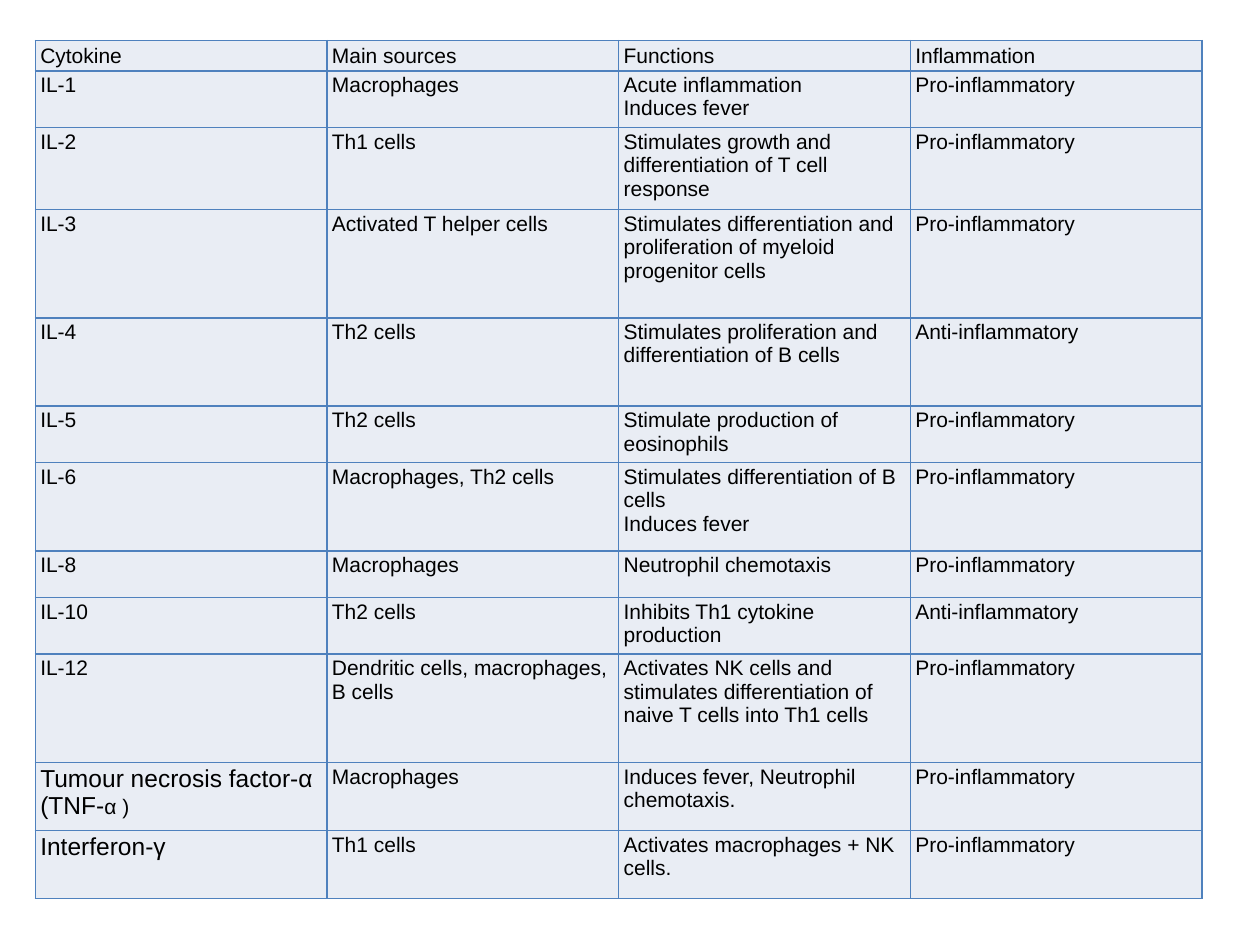
from dataclasses import dataclass

from pptx import Presentation
from pptx import util as u
from pptx.dml.color import RGBColor
from pptx.enum import text
from pptx.oxml import parse_xml
from pptx.oxml.ns import nsdecls


@dataclass(frozen=True)
class Theme:
    font: str = "Arial"
    ink: str = "000000"
    fill: str = "E9EDF4"
    border: str = "4F81BD"
    border_width: float = 1
    body: float = 12
    large: float = 14


@dataclass(frozen=True)
class Span:
    words: str
    size: float


@dataclass(frozen=True)
class Cytokine:
    name: str | tuple[Span, ...]
    sources: str
    functions: str
    inflammation: str
    height: float


THEME = Theme()
WIDTH, HEIGHT = u.Inches(10), u.Inches(7.5)
LEFT, TOP, TABLE_WIDTH = 0.028, 0.043, 0.926
PRO, ANTI = "Pro-inflammatory", "Anti-inflammatory"
MACROPHAGES, TH1, TH2 = "Macrophages", "Th1 cells", "Th2 cells"
CELL_FORMAT = {
    "margin_left": u.Inches(0.04),
    "margin_right": u.Inches(0.04),
    "margin_top": u.Inches(0.02),
    "margin_bottom": u.Inches(0.02),
}

ROWS = [
    Cytokine("Cytokine", "Main sources", "Functions", "Inflammation", 0.24),
    Cytokine("IL-1", MACROPHAGES, "Acute inflammation\nInduces fever", PRO, 0.45),
    Cytokine("IL-2", TH1, "Stimulates growth and differentiation of T cell response", PRO, 0.65),
    Cytokine("IL-3", "Activated T helper cells",
             "Stimulates differentiation and proliferation of myeloid progenitor cells", PRO, 0.86),
    Cytokine("IL-4", TH2, "Stimulates proliferation and differentiation of B cells", ANTI, 0.7),
    Cytokine("IL-5", TH2, "Stimulate production of eosinophils", PRO, 0.45),
    Cytokine("IL-6", "Macrophages, Th2 cells",
             "Stimulates differentiation of B cells\nInduces fever", PRO, 0.7),
    Cytokine("IL-8", MACROPHAGES, "Neutrophil chemotaxis", PRO, 0.37),
    Cytokine("IL-10", TH2, "Inhibits Th1 cytokine production", ANTI, 0.45),
    Cytokine("IL-12", "Dendritic cells, macrophages, B cells",
             "Activates NK cells and stimulates differentiation of naive T cells into Th1 cells",
             PRO, 0.86),
    Cytokine((Span("Tumour necrosis factor-α (TNF-", THEME.large), Span("α )", THEME.body)),
             MACROPHAGES, "Induces fever, Neutrophil chemotaxis.", PRO, 0.54),
    Cytokine((Span("Interferon-γ", THEME.large),), TH1,
             "Activates macrophages + NK cells.", PRO, 0.54),
]


def set_all(target, values: dict) -> None:
    for name, value in values.items():
        setattr(target, name, value)


def draw_borders(cell) -> None:
    properties = cell._tc.get_or_add_tcPr()
    for position, side in enumerate(("lnL", "lnR", "lnT", "lnB")):
        properties.insert(position, parse_xml(
            f'<a:{side} {nsdecls("a")} w="{u.Pt(THEME.border_width)}"><a:solidFill>'
            f'<a:srgbClr val="{THEME.border}"/></a:solidFill></a:{side}>'))


def write_span(para, span: Span) -> None:
    for index, line in enumerate(span.words.split("\n")):
        if index:
            para.add_line_break()
        run = para.add_run()
        run.text = line
        set_all(run.font, {"name": THEME.font, "size": u.Pt(span.size)})
        run.font.color.rgb = RGBColor.from_string(THEME.ink)


def fill_cell(cell, content: str | tuple[Span, ...], anchor) -> None:
    set_all(cell, CELL_FORMAT | {"vertical_anchor": anchor})
    cell.fill.solid()
    cell.fill.fore_color.rgb = RGBColor.from_string(THEME.fill)
    draw_borders(cell)
    spans = (Span(content, THEME.body),) if isinstance(content, str) else content
    para = cell.text_frame.paragraphs[0]
    para.font.size = u.Pt(THEME.body)
    for span in spans:
        write_span(para, span)


def draw_table(page, rows: list[Cytokine]) -> None:
    total = u.Inches(sum(row.height for row in rows))
    table = page.shapes.add_table(
        len(rows), 4, int(WIDTH * LEFT), int(HEIGHT * TOP), int(WIDTH * TABLE_WIDTH), total).table
    set_all(table, {"first_row": False, "horz_banding": False})
    for index, row in enumerate(rows):
        table.rows[index].height = u.Inches(row.height)
        anchor = text.MSO_ANCHOR.TOP if index else text.MSO_ANCHOR.BOTTOM
        contents = (row.name, row.sources, row.functions, row.inflammation)
        for column, content in enumerate(contents):
            fill_cell(table.cell(index, column), content, anchor)


def main() -> None:
    deck = Presentation()
    set_all(deck, {"slide_width": WIDTH, "slide_height": HEIGHT})
    page = deck.slides.add_slide(deck.slide_layouts[6])
    draw_table(page, ROWS)
    deck.save("out.pptx")


if __name__ == "__main__":
    main()
